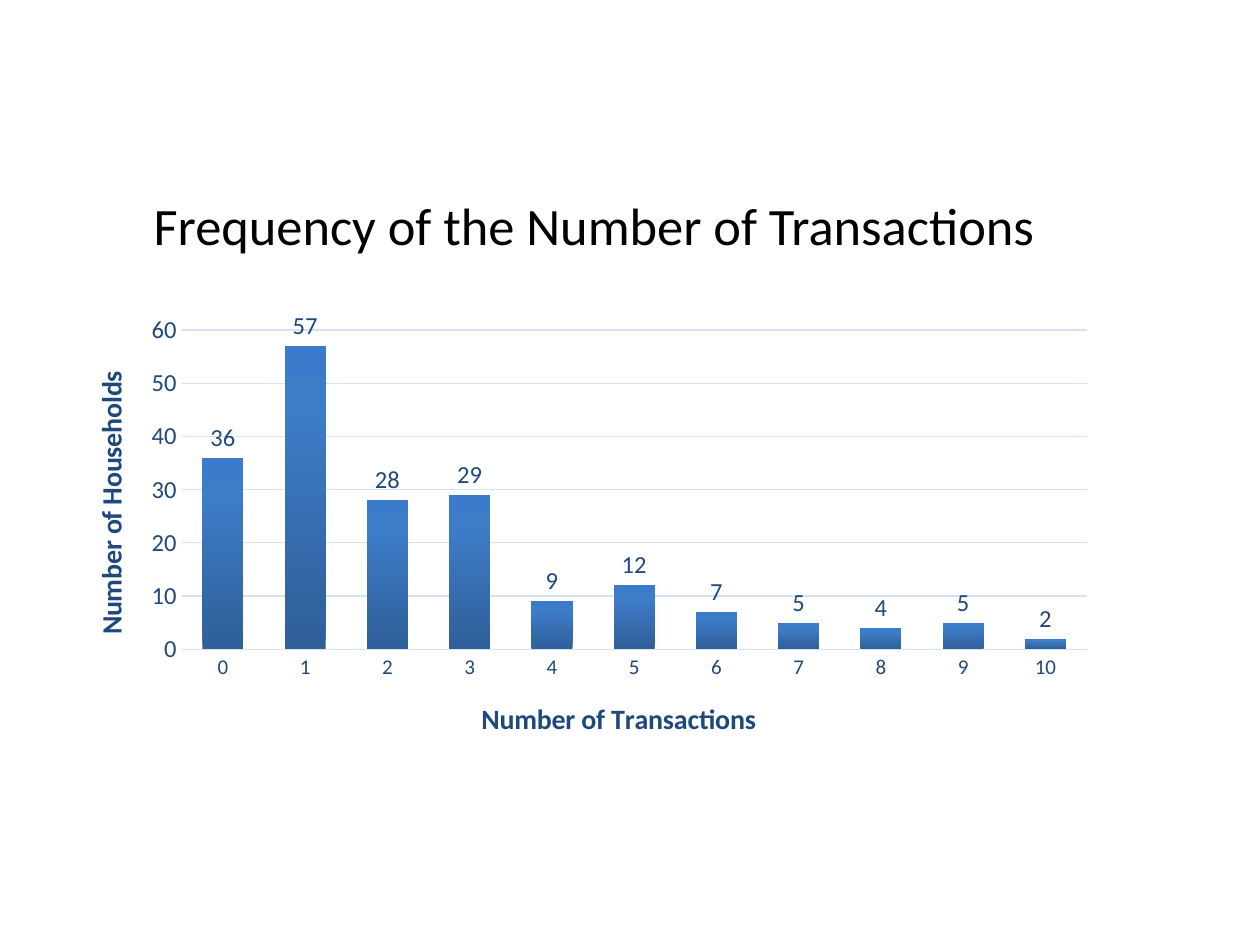
import lxml.etree
import pptx
import pptx.chart.data
import pptx.dml.color
import pptx.enum.chart
import pptx.enum.text
import pptx.oxml
import pptx.oxml.ns
import pptx.util
from pptx.util import Cm

TITLE = "Frequency of the Number of Transactions"
CATEGORY_TITLE = "Number of Transactions"
VALUE_TITLE = "Number of Households"
HOUSEHOLDS = [36, 57, 28, 29, 9, 12, 7, 5, 4, 5, 2]

THEME = {
    "font": "Calibri",
    "title": "000000",
    "text": "1F497D",
    "grid": "D4E3F4",
    "bar_stops": [(0, "2F5F99"), (80, "3D7CC7"), (100, "3A7CCB")],
    "title_size": 30,
    "axis_title_size": 16,
    "value_size": 14,
    "category_size": 12,
}


def style_font(font, size, color, bold=False):
    font.name = THEME["font"]
    font.size = pptx.util.Pt(size)
    font.bold = bold
    font.color.rgb = pptx.dml.color.RGBColor.from_string(color)


def style_line(line):
    line.color.rgb = pptx.dml.color.RGBColor.from_string(THEME["grid"])
    line.width = pptx.util.Pt(0.75)


def set_layout(parent, index, **settings):
    qn = pptx.oxml.ns.qn
    for old in parent.findall(qn("c:layout")):
        parent.remove(old)
    layout = lxml.etree.Element(qn("c:layout"))
    manual = lxml.etree.SubElement(layout, qn("c:manualLayout"))
    for name, value in settings.items():
        lxml.etree.SubElement(manual, qn("c:" + name)).set("val", str(value))
    parent.insert(index, layout)


def style_axis(axis, title, size, x, y):
    axis.major_tick_mark = pptx.enum.chart.XL_TICK_MARK.NONE
    axis.minor_tick_mark = pptx.enum.chart.XL_TICK_MARK.NONE
    style_font(axis.tick_labels.font, size, THEME["text"])
    frame = axis.axis_title.text_frame
    frame.text = title
    style_font(frame.paragraphs[0].font, THEME["axis_title_size"], THEME["text"], True)
    set_layout(axis.axis_title._element, 1, xMode="edge", yMode="edge", x=x, y=y)


def fill_bars(series):
    stops = "".join(
        f'<a:gs pos="{position * 1000}"><a:srgbClr val="{color}"/></a:gs>'
        for position, color in THEME["bar_stops"]
    )
    gradient = pptx.oxml.parse_xml(
        f'<a:gradFill {pptx.oxml.ns.nsdecls("a")} rotWithShape="1">'
        f'<a:gsLst>{stops}</a:gsLst><a:lin ang="16200000" scaled="0"/></a:gradFill>'
    )
    series.format.line.fill.background()
    series._element.spPr.insert(0, gradient)


def add_title(slide):
    box = slide.shapes.title
    box.left, box.top, box.width, box.height = Cm(1.12), Cm(3.15), Cm(21.72), Cm(2.77)
    frame = box.text_frame
    frame.text = TITLE
    frame.vertical_anchor = pptx.enum.text.MSO_ANCHOR.MIDDLE
    para = frame.paragraphs[0]
    para.alignment = pptx.enum.text.PP_ALIGN.CENTER
    style_font(para.font, THEME["title_size"], THEME["title"])


def add_frequency_chart(slide):
    data = pptx.chart.data.CategoryChartData()
    data.categories = [str(count) for count in range(len(HOUSEHOLDS))]
    data.add_series("Series 1", HOUSEHOLDS)
    chart = slide.shapes.add_chart(
        pptx.enum.chart.XL_CHART_TYPE.COLUMN_CLUSTERED,
        Cm(1.12), Cm(6.2), Cm(21.21), Cm(9.07), data,
    ).chart
    chart.has_title = False
    chart.has_legend = False
    style_font(chart.font, 10, THEME["title"])

    categories, values = chart.category_axis, chart.value_axis
    style_axis(categories, CATEGORY_TITLE, THEME["category_size"], 0.4, 0.86)
    style_line(categories.format.line)
    style_axis(values, VALUE_TITLE, THEME["value_size"], 0.03, 0.13)
    values.minimum_scale, values.maximum_scale, values.major_unit = 0, 60, 10
    values.format.line.fill.background()
    style_line(values.major_gridlines.format.line)

    plot = chart.plots[0]
    plot.gap_width, plot.overlap = 100, -24
    plot.vary_by_categories = False
    plot.has_data_labels = True
    labels = plot.data_labels
    labels.show_value = True
    labels.position = pptx.enum.chart.XL_LABEL_POSITION.OUTSIDE_END
    style_font(labels.font, THEME["value_size"], THEME["text"])
    fill_bars(plot.series[0])
    set_layout(
        chart._chartSpace.chart.plotArea, 0, layoutTarget="inner",
        xMode="edge", yMode="edge", x=0.12, y=0.05, w=0.86, h=0.71,
    )


def main():
    deck = pptx.Presentation()
    deck.slide_width, deck.slide_height = Cm(25.4), Cm(19.05)
    slide = deck.slides.add_slide(deck.slide_layouts[5])
    add_title(slide)
    add_frequency_chart(slide)
    deck.save("out.pptx")


if __name__ == "__main__":
    main()
